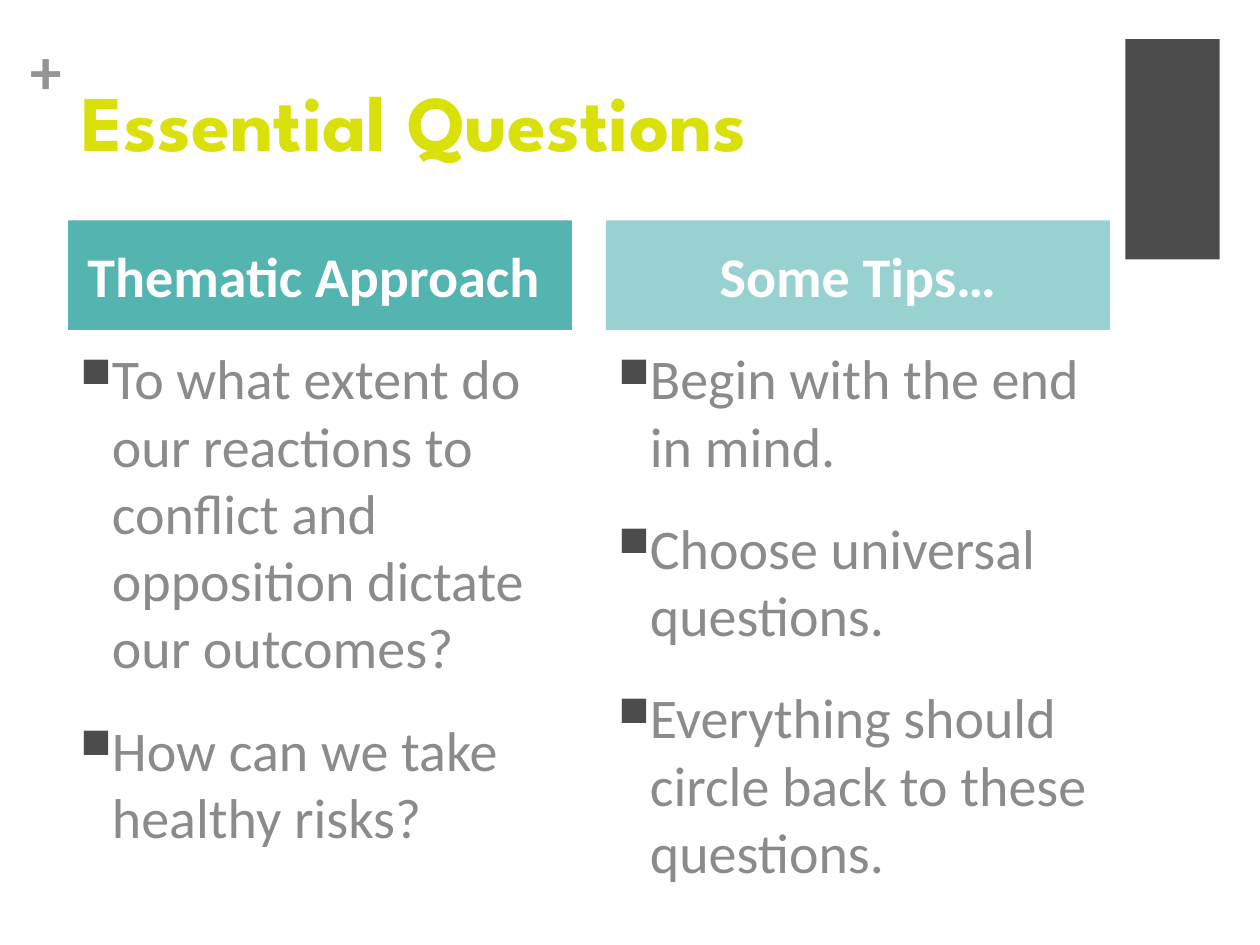
from lxml.etree import SubElement
from pptx import Presentation
from pptx.dml.color import RGBColor
from pptx.enum.shapes import MSO_SHAPE as Shape
from pptx.enum.text import MSO_ANCHOR as Anchor, MSO_AUTO_SIZE as AutoSize, PP_ALIGN as Align
from pptx.oxml.ns import qn
from pptx.util import Pt

DARK = "4C4C4C"
COLUMN_LEFTS = (38.9, 346.3)
COLUMN_WIDTH = 288
COLUMNS = [
    ("Thematic Approach ", "54B4B0", [
        "To what extent do our reactions to conflict and opposition dictate our outcomes?",
        "How can we take healthy risks?",
    ]),
    ("Some Tips…", "98D2D0", [
        "Begin with the end in mind.",
        "Choose universal questions.",
        "Everything should circle back to these questions.",
    ]),
]


def color(hex_value):
    return RGBColor.from_string(hex_value)


def add_run(paragraph, text, size, hex_value, bold=False, font="Calibri"):
    run = paragraph.add_run()
    run.text = text
    run.font.name = font
    run.font.size = Pt(size)
    run.font.bold = bold
    run.font.color.rgb = color(hex_value)


def add_box(slide, left, top, width, height, fill):
    shape = slide.shapes.add_shape(Shape.RECTANGLE, Pt(left), Pt(top), Pt(width), Pt(height))
    shape.shadow.inherit = False
    shape.fill.solid()
    shape.fill.fore_color.rgb = color(fill)
    shape.line.fill.background()
    return shape


def add_text_frame(slide, left, top, width, height):
    text_box = slide.shapes.add_textbox(Pt(left), Pt(top), Pt(width), Pt(height))
    text_box.text_frame.word_wrap = True
    return text_box.text_frame


def set_bullet(paragraph):
    """Give the paragraph a hanging indent and a small dark square."""
    properties = paragraph._p.get_or_add_pPr()
    properties.set("marL", str(Pt(18)))
    properties.set("indent", str(-Pt(18)))
    bullet_color = SubElement(properties, qn("a:buClr"))
    SubElement(bullet_color, qn("a:srgbClr"), val=DARK)
    SubElement(properties, qn("a:buSzPct"), val="75000")
    SubElement(properties, qn("a:buChar"), char="■")


def add_plus_sign(slide):
    frame = add_text_frame(slide, 17.3, 18, 20.9, 43.9)
    frame.margin_left = frame.margin_right = frame.margin_top = frame.margin_bottom = 0
    frame.auto_size = AutoSize.SHAPE_TO_FIT_TEXT
    add_run(frame.paragraphs[0], "+", 36, "949494", bold=True)


def add_title(slide, text):
    frame = add_text_frame(slide, 39.6, 38.2, 594.7, 87.8)
    add_run(frame.paragraphs[0], text, 45, "DAE009", bold=True, font="League Spartan")


def add_bullets(slide, left, items):
    frame = add_text_frame(slide, left, 193, COLUMN_WIDTH, 289.4)
    for index, item in enumerate(items):
        paragraph = frame.add_paragraph() if index else frame.paragraphs[0]
        paragraph.space_before = Pt(20)
        set_bullet(paragraph)
        add_run(paragraph, item, 32, "8B8B8B")


def add_heading(slide, left, text, fill):
    frame = add_box(slide, left, 126, COLUMN_WIDTH, 62.6, fill).text_frame
    frame.word_wrap = True
    frame.vertical_anchor = Anchor.MIDDLE
    frame.margin_top = frame.margin_bottom = 0
    paragraph = frame.paragraphs[0]
    paragraph.alignment = Align.CENTER
    add_run(paragraph, text, 32, "FFFFFF", bold=True)


def main():
    presentation = Presentation()
    presentation.slide_width, presentation.slide_height = Pt(720), Pt(540)
    slide = presentation.slides.add_slide(presentation.slide_layouts[6])
    add_box(slide, 643, 22.3, 54, 126, DARK)
    add_plus_sign(slide)
    add_title(slide, "Essential Questions")
    for left, (heading, fill, items) in zip(COLUMN_LEFTS, COLUMNS):
        add_bullets(slide, left, items)
        add_heading(slide, left, heading, fill)
    presentation.save("out.pptx")


if __name__ == "__main__":
    main()
